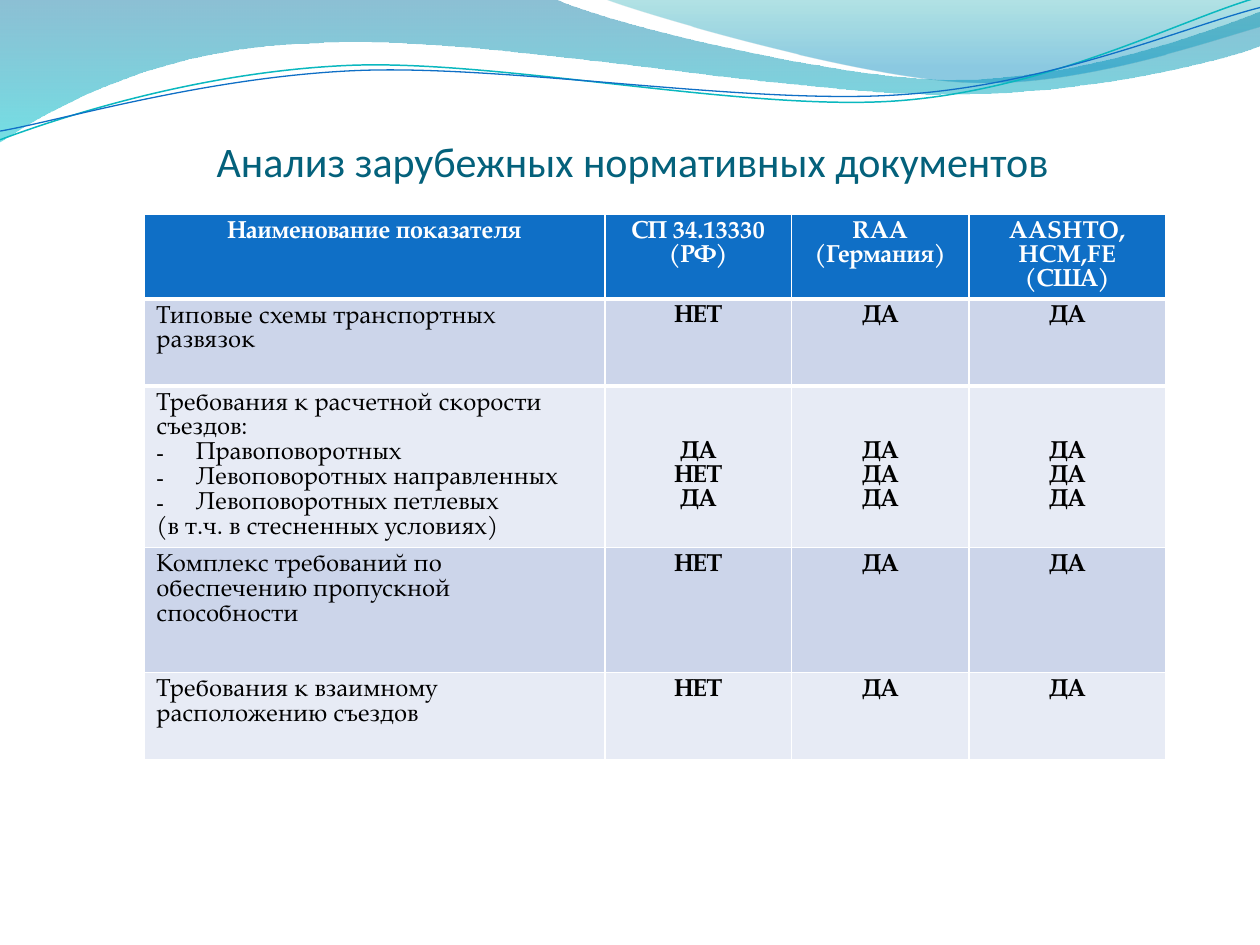
import dataclasses
import typing

import lxml.etree
import pptx
import pptx.dml.color
import pptx.enum.text
import pptx.oxml.ns
import pptx.util

Pt = pptx.util.Pt
qn = pptx.oxml.ns.qn
ALIGN = pptx.enum.text.PP_ALIGN
COLORS = {
    "header": "0F6FC6", "band_dark": "CCD5EA", "band_light": "E7EBF5",
    "white": "FFFFFF", "black": "000000", "title": "04617B",
    "deep": "0074A1", "cyan": "00C6CF", "teal": "00A1A9", "blue": "008BBF",
    "line_teal": "0AB8BF", "line_blue": "0F6FC6",
}
TABLE_FONT = "TeX Gyre Pagella"
Point = tuple[float, float]


@dataclasses.dataclass
class Stop:
    position: float
    color: str
    opacity: int


@dataclasses.dataclass
class Wave:
    start: Point
    segments: list[tuple[Point, ...]]
    stops: tuple[Stop, ...] = ()
    line_color: str = ""
    line_width: float = 0


@dataclasses.dataclass
class Criterion:
    name: list[str]
    answers: list[list[str]]
    height: float
    answer_offset: float = 0


WAVES = [
    Wave((-0.7, 0), [
        ((316.8, -0.7),),
        ((342.7, 12.2), (478, 45.4), (545.8, 45.4)),
        ((614.2, 45.4), (689.8, 18.7), (720, 6.5)),
        ((720.7, 25.9),),
        ((707.8, 31.7), (626.4, 54.7), (537.1, 54)),
        ((447.8, 54), (275, 20.2), (185, 24.5)),
        ((92.9, 25.9), (33.1, 59.8), (-0.7, 81.4)),
    ], (Stop(0, "deep", 45), Stop(1, "cyan", 55))),
    Wave((344.9, -0.7), [
        ((366.5, 7.9), (491, 44.6), (553.7, 46.8)),
        ((616.3, 49.7), (691.9, 23), (720, 15.1)),
        ((720, 0),),
    ], (Stop(0, "teal", 30), Stop(0.8, "blue", 45))),
    Wave((0, 79.9), [
        ((34.6, 67), (113.8, 41), (199.4, 37.4)),
        ((284.4, 33.8), (427, 64.1), (513.4, 57.6)),
        ((599.8, 51.1), (675.4, 10.8), (718.6, -1.4)),
    ], line_color="line_teal", line_width=0.85),
    Wave((0, 74.9), [
        ((33.8, 69.1), (118.1, 43.9), (203.8, 40.3)),
        ((290.2, 36.7), (429.8, 60.5), (516.2, 54)),
        ((601.9, 48.2), (677.5, 15.1), (720, 4.3)),
    ], line_color="line_blue", line_width=0.75),
]

COLUMN_WIDTHS = [263.5, 106.5, 101.5, 112.3]
HEADER_HEIGHT = 47.8
HEADINGS = [["Наименование показателя"], ["СП 34.13330 (РФ)"],
            ["RAA (Германия)"], ["AASHTO,", "HCM,FE (США)"]]
SINGLE_ANSWERS = [["НЕТ"], ["ДА"], ["ДА"]]
CRITERIA = [
    Criterion(["Типовые схемы транспортных развязок"], SINGLE_ANSWERS, 49.7),
    Criterion(["Требования к расчетной скорости съездов:",
               "- Правоповоротных",
               "- Левоповоротных направленных",
               "- Левоповоротных петлевых",
               "(в т.ч. в стесненных условиях)"],
              [["ДА", "НЕТ", "ДА"], ["ДА"] * 3, ["ДА"] * 3], 92.5, 28),
    Criterion(["Комплекс требований по обеспечению пропускной способности"],
              SINGLE_ANSWERS, 71.2),
    Criterion(["Требования к взаимному расположению съездов"],
              SINGLE_ANSWERS, 49.7),
]


def rgb(name: str) -> pptx.dml.color.RGBColor:
    return pptx.dml.color.RGBColor.from_string(COLORS[name])


def add_child(parent: typing.Any, tag: str, **attributes: typing.Any) -> typing.Any:
    return lxml.etree.SubElement(parent, qn(tag),
                                 {key: str(value) for key, value in attributes.items()})


def bend_segments(ribbon: typing.Any, segments: list[tuple[Point, ...]]) -> None:
    straight = list(ribbon._element.spPr.iter(qn("a:lnTo")))
    for edge, segment in zip(straight, segments):
        if len(segment) == 3:
            curve = lxml.etree.Element(qn("a:cubicBezTo"))
            for x, y in segment:
                add_child(curve, "a:pt", x=Pt(x) - ribbon.left, y=Pt(y) - ribbon.top)
            edge.getparent().replace(edge, curve)


def draw_wave(shapes: typing.Any, wave: Wave) -> None:
    anchors = [wave.start] + [segment[-1] for segment in wave.segments]
    vertices = [(Pt(x), Pt(y)) for x, y in anchors]
    builder = shapes.build_freeform(*vertices[0])
    builder.add_line_segments(vertices[1:], close=bool(wave.stops))
    ribbon = builder.convert_to_shape()
    bend_segments(ribbon, wave.segments)
    ribbon.shadow.inherit = False
    if not wave.stops:
        ribbon.fill.background()
        ribbon.line.color.rgb = rgb(wave.line_color)
        ribbon.line.width = Pt(wave.line_width)
        return
    ribbon.line.fill.background()
    ribbon.fill.gradient()
    ribbon.fill.gradient_angle = 270
    for target, stop in zip(ribbon.fill.gradient_stops, wave.stops):
        target.position = stop.position
        target.color.rgb = rgb(stop.color)
    tints = list(ribbon._element.spPr.iter(qn("a:srgbClr")))
    for tint, stop in zip(tints, wave.stops):
        add_child(tint, "a:alpha", val=stop.opacity * 1000)


def add_dash(paragraph: typing.Any) -> None:
    properties = paragraph._p.get_or_add_pPr()
    properties.set("marL", str(Pt(22.5)))
    properties.set("indent", str(-Pt(22.5)))
    add_child(properties, "a:buFont", typeface="Calibri")
    add_child(properties, "a:buChar", char="-")


def add_border(cell: typing.Any, side: str, width: float) -> None:
    properties = cell._tc.get_or_add_tcPr()
    border = add_child(properties, side, w=Pt(width))
    add_child(add_child(border, "a:solidFill"), "a:srgbClr", val=COLORS["white"])
    properties.insert(0, border)


def fill_cell(cell: typing.Any, lines: list[str], fill: str, color: str,
              bold: bool, centered: bool, offset: float = 0) -> None:
    cell.fill.solid()
    cell.fill.fore_color.rgb = rgb(fill)
    cell.margin_top = Pt(3.6 + offset)
    frame = cell.text_frame
    for index, line in enumerate(lines):
        paragraph = frame.add_paragraph() if index else frame.paragraphs[0]
        paragraph.alignment = ALIGN.CENTER if centered else ALIGN.LEFT
        if line.startswith("- "):
            add_dash(paragraph)
        run = paragraph.add_run()
        run.text = line.removeprefix("- ")
        run.font.name = TABLE_FONT
        run.font.size = Pt(14)
        run.font.bold = bold
        run.font.color.rgb = rgb(color)


def draw_title(title: typing.Any) -> None:
    title.left, title.top, title.width, title.height = Pt(37.5), Pt(72), Pt(648), Pt(34)
    frame = title.text_frame
    frame.margin_left = frame.margin_right = frame.margin_bottom = 0
    frame.margin_top = Pt(3.6)
    frame.word_wrap = True
    frame.auto_size = pptx.enum.text.MSO_AUTO_SIZE.NONE
    frame.vertical_anchor = pptx.enum.text.MSO_ANCHOR.BOTTOM
    heading = frame.paragraphs[0]
    heading.alignment = ALIGN.CENTER
    run = heading.add_run()
    run.text = "Анализ зарубежных нормативных документов"
    run.font.name = "Calibri"
    run.font.size = Pt(24)
    run.font.color.rgb = rgb("title")


def draw_comparison(shapes: typing.Any) -> None:
    heights = [HEADER_HEIGHT] + [criterion.height for criterion in CRITERIA]
    comparison = shapes.add_table(len(heights), len(COLUMN_WIDTHS), Pt(82.2), Pt(122.5),
                                  Pt(sum(COLUMN_WIDTHS)), Pt(sum(heights))).table
    for column, width in zip(comparison.columns, COLUMN_WIDTHS):
        column.width = Pt(width)
    for row, height in zip(comparison.rows, heights):
        row.height = Pt(height)
    for column, lines in enumerate(HEADINGS):
        fill_cell(comparison.cell(0, column), lines, "header", "white", True, True)
        add_border(comparison.cell(0, column), "a:lnB", 3)
        add_border(comparison.cell(1, column), "a:lnT", 3)
    for row, criterion in enumerate(CRITERIA, 1):
        band = "band_dark" if row % 2 else "band_light"
        fill_cell(comparison.cell(row, 0), criterion.name, band, "black", False, False)
        for column, answer in enumerate(criterion.answers, 1):
            fill_cell(comparison.cell(row, column), answer, band, "black", True, True,
                      criterion.answer_offset)


def main() -> None:
    deck = pptx.Presentation()
    deck.slide_width, deck.slide_height = Pt(720), Pt(540)
    slide = deck.slides.add_slide(deck.slide_layouts[5])
    for wave in WAVES:
        draw_wave(slide.shapes, wave)
    draw_title(slide.shapes.title)
    draw_comparison(slide.shapes)
    deck.save("out.pptx")


if __name__ == "__main__":
    main()
